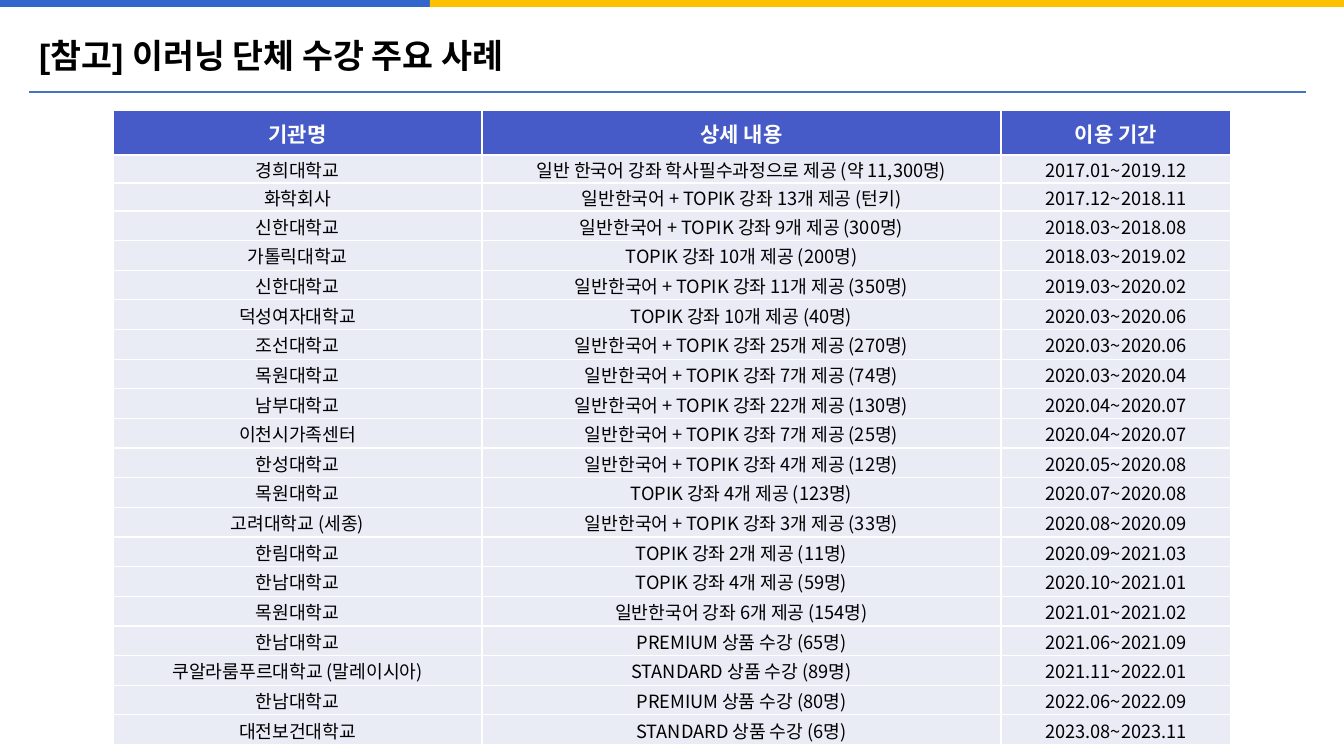
from lxml import etree
from pptx import Presentation
from pptx.dml.color import RGBColor
from pptx.enum.shapes import MSO_CONNECTOR, MSO_SHAPE
from pptx.enum.text import MSO_ANCHOR, MSO_AUTO_SIZE, PP_ALIGN
from pptx.oxml import parse_xml
from pptx.oxml.ns import qn
from pptx.util import Emu, Pt

RECTANGLE = MSO_SHAPE.RECTANGLE
STRAIGHT = MSO_CONNECTOR.STRAIGHT
MIDDLE = MSO_ANCHOR.MIDDLE
LEFT, CENTER = PP_ALIGN.LEFT, PP_ALIGN.CENTER
NO_AUTOFIT = MSO_AUTO_SIZE.NONE

KOREAN_FONT = "Noto Sans CJK KR"
COLORS = {
    "blue": "3366CC", "amber": "FFC000", "rule": "4472C4",
    "header": "465BC7", "body": "E9EBF5", "white": "FFFFFF", "black": "000000",
}
HEADINGS = ("기관명", "상세 내용", "이용 기간")
CASES = [
    ("경희대학교", "일반 한국어 강좌 학사필수과정으로 제공 (약 11,300명)", "2017.01~2019.12"),
    ("화학회사", "일반한국어 + TOPIK 강좌 13개 제공 (턴키)", "2017.12~2018.11"),
    ("신한대학교", "일반한국어 + TOPIK 강좌 9개 제공 (300명)", "2018.03~2018.08"),
    ("가톨릭대학교", "TOPIK 강좌 10개 제공 (200명)", "2018.03~2019.02"),
    ("신한대학교", "일반한국어 + TOPIK 강좌 11개 제공 (350명)", "2019.03~2020.02"),
    ("덕성여자대학교", "TOPIK 강좌 10개 제공 (40명)", "2020.03~2020.06"),
    ("조선대학교", "일반한국어 + TOPIK 강좌 25개 제공 (270명)", "2020.03~2020.06"),
    ("목원대학교", "일반한국어 + TOPIK 강좌 7개 제공 (74명)", "2020.03~2020.04"),
    ("남부대학교", "일반한국어 + TOPIK 강좌 22개 제공 (130명)", "2020.04~2020.07"),
    ("이천시가족센터", "일반한국어 + TOPIK 강좌 7개 제공 (25명)", "2020.04~2020.07"),
    ("한성대학교", "일반한국어 + TOPIK 강좌 4개 제공 (12명)", "2020.05~2020.08"),
    ("목원대학교", "TOPIK 강좌 4개 제공 (123명)", "2020.07~2020.08"),
    ("고려대학교 (세종)", "일반한국어 + TOPIK 강좌 3개 제공 (33명)", "2020.08~2020.09"),
    ("한림대학교", "TOPIK 강좌 2개 제공 (11명)", "2020.09~2021.03"),
    ("한남대학교", "TOPIK 강좌 4개 제공 (59명)", "2020.10~2021.01"),
    ("목원대학교", "일반한국어 강좌 6개 제공 (154명)", "2021.01~2021.02"),
    ("한남대학교", "PREMIUM 상품 수강 (65명)", "2021.06~2021.09"),
    ("쿠알라룸푸르대학교 (말레이시아)", "STANDARD 상품 수강 (89명)", "2021.11~2022.01"),
    ("한남대학교", "PREMIUM 상품 수강 (80명)", "2022.06~2022.09"),
    ("대전보건대학교", "STANDARD 상품 수강 (6명)", "2023.08~2023.11"),
]


def px(length):
    return Emu(round(length * 914400 / 100.8))


def write_text(frame, text, size, color, bold=False, align=CENTER, font=KOREAN_FONT):
    para = frame.paragraphs[0]
    para.alignment = align
    span = para.add_run()
    span.text = text
    span.font.size = Pt(size)
    span.font.bold = bold
    span.font.color.rgb = RGBColor.from_string(COLORS[color])
    span.font.name = font
    east_asian = etree.SubElement(span.font._element, qn("a:ea"))
    east_asian.set("typeface", KOREAN_FONT)
    return para


deck = Presentation()
deck.slide_width, deck.slide_height = px(1344), px(756)
page = deck.slides.add_slide(deck.slide_layouts[5])

# Top band and rule under the title
for left, width, color in ((0, 430, "blue"), (430, 914, "amber")):
    band = page.shapes.add_shape(RECTANGLE, px(left), 0, px(width), px(7))
    band.shadow.inherit = False
    band.fill.solid()
    band.fill.fore_color.rgb = RGBColor.from_string(COLORS[color])
    band.line.fill.background()

rule = page.shapes.add_connector(STRAIGHT, px(29), px(92), px(1306), px(92))
rule.line.color.rgb = RGBColor.from_string(COLORS["rule"])
rule.line.width = Pt(1)
etree.SubElement(rule._element.spPr, qn("a:effectLst"))

# Title
title = page.shapes.title
title.left, title.top, title.width, title.height = px(29), px(16), px(1154), px(84)
title.text_frame.auto_size = NO_AUTOFIT
title.text_frame.vertical_anchor = MIDDLE
title_para = write_text(title.text_frame, "[참고] 이러닝 단체 수강 주요 사례", 24, "black",
                        bold=True, align=LEFT, font="Arial")
title_para.line_spacing = 0.9

# Table of cases: two tight rows, then equal rows down to the bottom
column_widths = (369, 519, 230)
row_heights = [45, 28, 28] + [534 / 18] * 18
table = page.shapes.add_table(len(row_heights), len(column_widths), px(113), px(110),
                              px(sum(column_widths)), px(sum(row_heights))).table
table.horz_banding = False
for column, width in zip(table.columns, column_widths):
    column.width = px(width)
for row, height in zip(table.rows, row_heights):
    row.height = px(height)

for row_index, record in enumerate([HEADINGS] + CASES):
    is_header = row_index == 0
    for column_index, text in enumerate(record):
        cell = table.cell(row_index, column_index)
        cell.margin_left = cell.margin_right = cell.margin_top = px(1)
        cell.margin_bottom = 0
        cell.vertical_anchor = MIDDLE
        for side in ("lnL", "lnR", "lnT", "lnB"):
            cell._tc.tcPr.append(parse_xml(
                f'<a:{side} xmlns:a="http://schemas.openxmlformats.org/drawingml/2006/main"'
                f' w="{Pt(1)}"><a:solidFill><a:srgbClr val="{COLORS["white"]}"/>'
                f'</a:solidFill></a:{side}>'))
        cell.fill.solid()
        cell.fill.fore_color.rgb = RGBColor.from_string(COLORS["header" if is_header else "body"])
        write_text(cell.text_frame, text, size=15 if is_header else 13,
                   color="white" if is_header else "black", bold=is_header)

deck.save("out.pptx")
